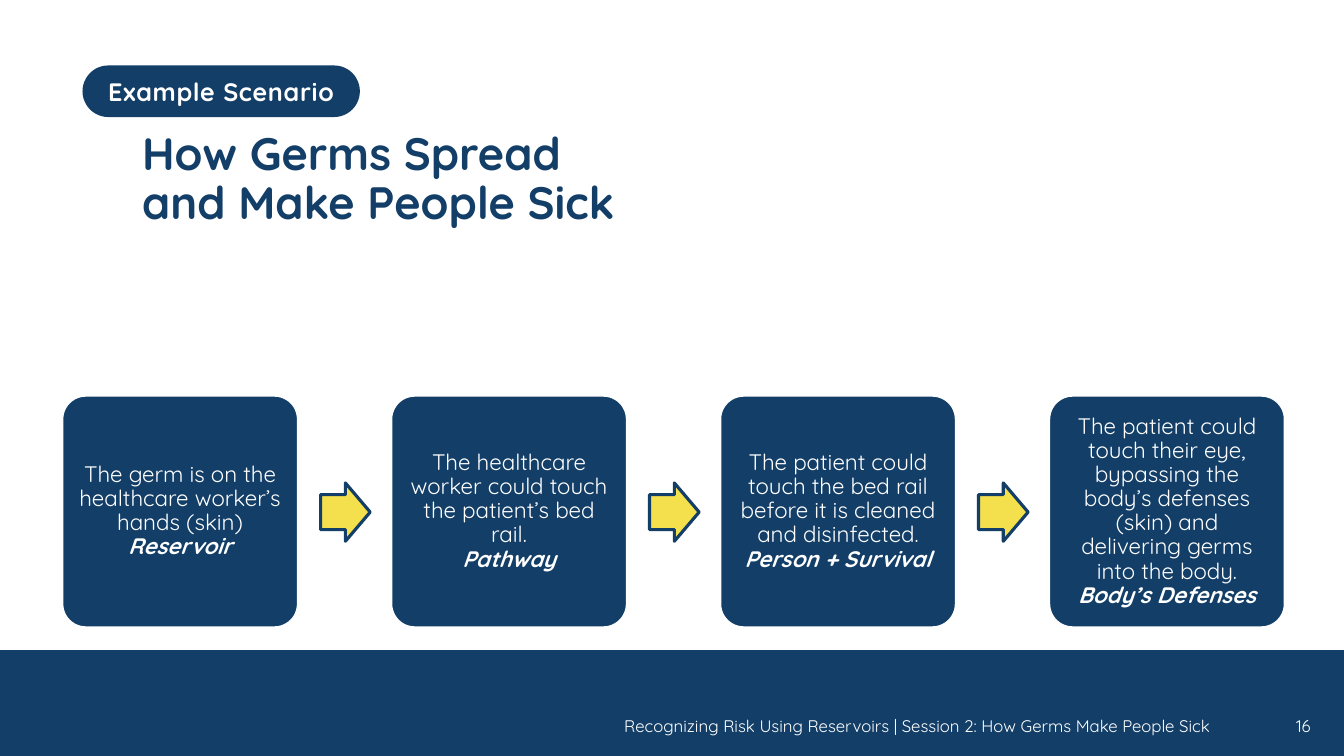
from dataclasses import dataclass

import pptx
import pptx.dml.color
import pptx.enum.shapes
import pptx.enum.text
import pptx.util
from pptx.util import Cm

COLOURS = {"navy": "123E67", "yellow": "F4DF4D", "white": "FFFFFF"}
FONT = "Quicksand"
ALIGN = pptx.enum.text.PP_ALIGN
ANCHOR = pptx.enum.text.MSO_ANCHOR
PRESET = pptx.enum.shapes.MSO_SHAPE


@dataclass(frozen=True)
class Box:
    left: float
    top: float
    width: float
    height: float

    def lengths(self) -> tuple:
        return Cm(self.left), Cm(self.top), Cm(self.width), Cm(self.height)


@dataclass(frozen=True)
class Step:
    event: str
    link: str


@dataclass(frozen=True)
class Label:
    text: str
    box: Box
    size: float
    align: ALIGN
    anchor: ANCHOR
    bold: bool = False
    colour: str = "white"
    line_spacing: float = 1.0
    margin_bottom: float = 0.13


STEPS = [
    Step("The germ is on the healthcare worker’s hands (skin)", "Reservoir"),
    Step("The healthcare worker could touch the patient’s bed rail.", "Pathway"),
    Step("The patient could touch the bed rail before it is cleaned and disinfected.",
         "Person + Survival"),
    Step("The patient could touch their eye, bypassing the body’s defenses (skin) "
         "and delivering germs into the body.", "Body’s Defenses"),
]
LABELS = [
    Label("Recognizing Risk Using Reservoirs | Session 2: How Germs Make People Sick",
          Box(8.03, 17.91, 22.73, 0.77), 12, ALIGN.RIGHT, ANCHOR.TOP),
    Label("16", Box(31.55, 17.91, 1.73, 0.77), 12, ALIGN.RIGHT, ANCHOR.MIDDLE),
    Label("How Germs Spread and Make People Sick", Box(3.33, 3.63, 13, 3.51), 32.4,
          ALIGN.LEFT, ANCHOR.BOTTOM, True, "navy", 0.9, 1.36),
]
FIRST_CARD = Box(1.58, 9.98, 5.92, 5.82)
FIRST_ARROW = Box(8.08, 12.17, 1.25, 1.47)
STEP_PITCH = 8.29


def rgb(name: str) -> pptx.dml.color.RGBColor:
    return pptx.dml.color.RGBColor.from_string(COLOURS[name])


def style_paragraph(paragraph, size: float, align: ALIGN, colour: str = "white",
                    bold: bool = False, italic: bool = False,
                    line_spacing: float = 1.0) -> None:
    paragraph.alignment = align
    paragraph.line_spacing = line_spacing
    for run in paragraph.runs:
        run.font.name = FONT
        run.font.size = pptx.util.Pt(size)
        run.font.bold = bold
        run.font.italic = italic
        run.font.color.rgb = rgb(colour)


def add_block(slide, preset: PRESET, box: Box, fill: str, line: str = "",
              line_width: float = 1, adjustments: tuple = ()):
    block = slide.shapes.add_shape(preset, *box.lengths())
    block.shadow.inherit = False
    block.fill.solid()
    block.fill.fore_color.rgb = rgb(fill)
    if line:
        block.line.color.rgb = rgb(line)
        block.line.width = pptx.util.Pt(line_width)
    else:
        block.line.fill.background()
    for index, value in enumerate(adjustments):
        block.adjustments[index] = value
    return block


def add_label(slide, label: Label) -> None:
    frame = slide.shapes.add_textbox(*label.box.lengths()).text_frame
    frame.word_wrap = True
    frame.vertical_anchor = label.anchor
    frame.margin_bottom = Cm(label.margin_bottom)
    frame.text = label.text
    style_paragraph(frame.paragraphs[0], label.size, label.align, label.colour,
                    label.bold, line_spacing=label.line_spacing)


def add_tag(slide) -> None:
    tag = add_block(slide, PRESET.ROUNDED_RECTANGLE, Box(2.08, 1.65, 6.99, 1.3),
                    "navy", adjustments=(0.5,))
    frame = tag.text_frame
    frame.word_wrap = False
    frame.vertical_anchor = ANCHOR.MIDDLE
    frame.text = "Example Scenario"
    style_paragraph(frame.paragraphs[0], 18, ALIGN.CENTER, bold=True)
    frame.paragraphs[0].runs[0].font._element.set("spc", "50")


def add_card(slide, step: Step, offset: float) -> None:
    box = Box(FIRST_CARD.left + offset, FIRST_CARD.top,
              FIRST_CARD.width, FIRST_CARD.height)
    card = add_block(slide, PRESET.ROUNDED_RECTANGLE, box, "navy", "white",
                     adjustments=(0.1,))
    frame = card.text_frame
    frame.word_wrap = True
    frame.vertical_anchor = ANCHOR.MIDDLE
    frame.margin_left = frame.margin_right = Cm(0.16)
    frame.margin_top = frame.margin_bottom = Cm(0.16)
    frame.text = step.event
    style_paragraph(frame.paragraphs[0], 16, ALIGN.CENTER, line_spacing=0.9)
    link = frame.add_paragraph()
    link.text = step.link
    style_paragraph(link, 16, ALIGN.CENTER, bold=True, italic=True, line_spacing=0.9)


def add_arrow(slide, offset: float) -> None:
    box = Box(FIRST_ARROW.left + offset, FIRST_ARROW.top,
              FIRST_ARROW.width, FIRST_ARROW.height)
    add_block(slide, PRESET.RIGHT_ARROW, box, "yellow", "navy", 2.25, (0.6, 0.5))


def main() -> None:
    deck = pptx.Presentation()
    deck.slide_width, deck.slide_height = Cm(33.87), Cm(19.05)
    slide = deck.slides.add_slide(deck.slide_layouts[6])
    add_block(slide, PRESET.RECTANGLE, Box(0, 16.38, 33.87, 2.67), "navy")
    for label in LABELS:
        add_label(slide, label)
    add_tag(slide)
    for index, step in enumerate(STEPS):
        add_card(slide, step, index * STEP_PITCH)
        if index < len(STEPS) - 1:
            add_arrow(slide, index * STEP_PITCH)
    deck.save("out.pptx")


if __name__ == "__main__":
    main()
